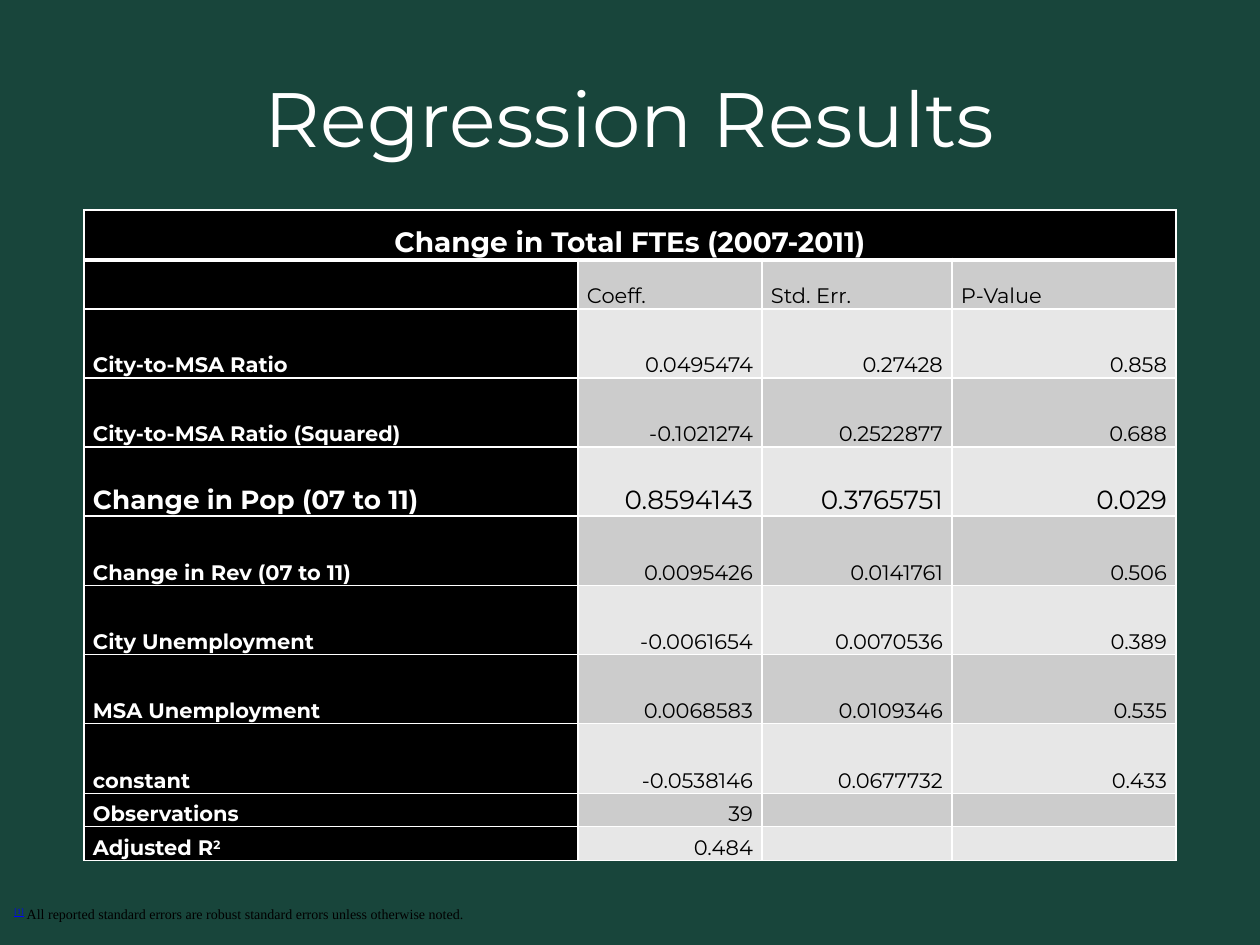
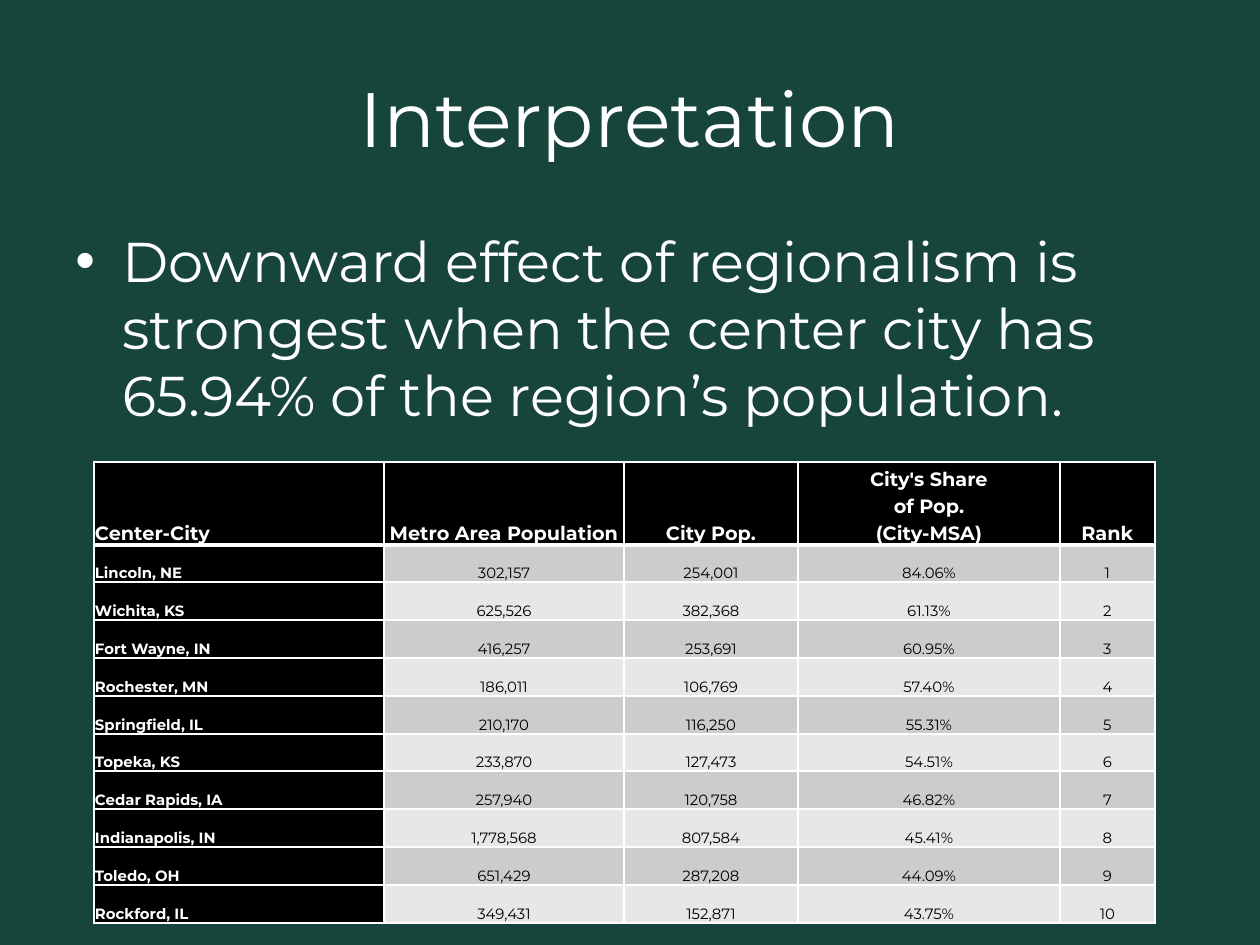
from lxml import etree
from pptx import Presentation
from pptx.dml.color import RGBColor
from pptx.enum.text import MSO_ANCHOR, PP_ALIGN
from pptx.oxml.ns import qn
from pptx.util import Emu, Pt

LEFT, CENTER, RIGHT = PP_ALIGN.LEFT, PP_ALIGN.CENTER, PP_ALIGN.RIGHT
TOP, MIDDLE, BOTTOM = MSO_ANCHOR.TOP, MSO_ANCHOR.MIDDLE, MSO_ANCHOR.BOTTOM

GREEN, WHITE, BLACK, LINK = "18453B", "FFFFFF", "000000", "0000FF"
BANDS = ("E7E7E7", "CCCCCC")
FONT, NOTE_FONT = "Montserrat", "Times New Roman"
TITLE_ONLY = 5


def px(n):
    return Emu(round(n * 914400 / 126))


def rgb(color):
    return RGBColor.from_string(color)


def split(total, n):
    """Divide total into n nearly equal whole lengths."""
    return [total * (i + 1) // n - total * i // n for i in range(n)]


def format_run(r, size, color, font=FONT, bold=False, underline=False, sup=False):
    f = r.font
    f.name, f.size, f.bold, f.underline = font, Pt(size), bold, underline
    f.color.rgb = rgb(color)
    if sup:
        r._r.get_or_add_rPr().set("baseline", "30000")


def write(tf, text, align=LEFT, spacing=None, **fmt):
    """Fill tf with a string (one paragraph a line) or a list of (text, format) runs."""
    paragraphs = text.split("\n") if isinstance(text, str) else [text]
    for i, runs in enumerate(paragraphs):
        p = tf.add_paragraph() if i else tf.paragraphs[0]
        p.alignment, p.line_spacing = align, spacing
        if not runs:
            p._p.get_or_add_endParaRPr().set("sz", str(round(fmt["size"] * 100)))
            continue
        for part, extra in [(runs, {})] if isinstance(runs, str) else runs:
            r = p.add_run()
            r.text = part
            format_run(r, **{**fmt, **extra})


def set_borders(cell, **widths):
    """Draw white cell borders; L, R, T and B are widths in points."""
    tc_pr = cell._tc.get_or_add_tcPr()
    for i, side in enumerate("LRTB"):
        ln = etree.Element(qn("a:ln" + side), w=str(Pt(widths.get(side, 1))))
        fill = etree.SubElement(ln, qn("a:solidFill"))
        etree.SubElement(fill, qn("a:srgbClr"), val=WHITE)
        tc_pr.insert(i, ln)


class Deck:
    def __init__(self):
        self.prs = Presentation()
        self.prs.slide_width, self.prs.slide_height = px(1260), px(945)
        self.s = None

    def slide(self, title):
        self.s = self.prs.slides.add_slide(self.prs.slide_layouts[TITLE_ONLY])
        fill = self.s.background.fill
        fill.solid()
        fill.fore_color.rgb = rgb(GREEN)
        sp = self.s.shapes.title
        sp.left, sp.top, sp.width, sp.height = map(px, (63, 38, 1134, 157))
        sp.text_frame.vertical_anchor = MIDDLE
        write(sp.text_frame, title, align=CENTER, size=44, color=WHITE)

    def text(self, x, y, w, h, text, anchor=TOP, **fmt):
        tf = self.s.shapes.add_textbox(px(x), px(y), px(w), px(h)).text_frame
        tf.word_wrap, tf.vertical_anchor = True, anchor
        write(tf, text, **fmt)
        return tf

    def bullet(self, x, y, w, h, text, size, indent):
        p = self.text(x, y, w, h, text, size=size, color=WHITE).paragraphs[0]
        p.space_before = Pt(size * 0.2)
        p_pr = p._p.get_or_add_pPr()
        p_pr.set("marL", str(px(indent)))
        p_pr.set("indent", str(-px(indent)))
        etree.SubElement(p_pr, qn("a:buFont"), typeface="Arial")
        etree.SubElement(p_pr, qn("a:buChar"), char="•")

    def table(self, x, y, cols, heights, data, sizes, margins, align, row_aligns):
        """Black header row and label column, banded values; a one-cell row is merged."""
        frame = self.s.shapes.add_table(len(data), len(cols), px(x), px(y),
                                        px(sum(cols)), px(sum(heights)))
        tbl = frame.table
        tbl.first_row = tbl.horz_banding = False
        for col, w in zip(tbl.columns, cols):
            col.width = px(w)
        for i, (row, h, size) in enumerate(zip(data, heights, sizes)):
            tbl.rows[i].height = px(h)
            for j in range(len(cols)):
                cell = tbl.cell(i, j)
                dark = i == 0 or j == 0
                cell.fill.solid()
                cell.fill.fore_color.rgb = rgb(BLACK if dark else BANDS[i % 2])
                set_borders(cell, T=3 if i == 1 else 1, B=3 if i == 0 else 1)
                cell.vertical_anchor = BOTTOM
                (cell.margin_left, cell.margin_top,
                 cell.margin_right, cell.margin_bottom) = map(px, margins)
                write(cell.text_frame, row[j] if j < len(row) else "",
                      align=row_aligns.get(i, align if j else LEFT), spacing=1.15,
                      size=size, color=WHITE if dark else BLACK, bold=dark)
            if len(row) == 1:
                tbl.cell(i, 0).merge(tbl.cell(i, len(cols) - 1))


REGRESSION = [
    ["Change in Total FTEs (2007-2011)"],
    ["", "Coeff.", "Std. Err.", "P-Value"],
    ["City-to-MSA Ratio", "0.0495474", "0.27428", "0.858"],
    ["City-to-MSA Ratio (Squared)", "-0.1021274", "0.2522877", "0.688"],
    ["Change in Pop (07 to 11)", "0.8594143", "0.3765751", "0.029"],
    ["Change in Rev (07 to 11)", "0.0095426", "0.0141761", "0.506"],
    ["City Unemployment", "-0.0061654", "0.0070536", "0.389"],
    ["MSA Unemployment", "0.0068583", "0.0109346", "0.535"],
    ["constant", "-0.0538146", "0.0677732", "0.433"],
    ["Observations", "39", "", ""],
    [[("Adjusted R", {}), ("2", {"sup": True})], "0.484", "", ""],
]

CITIES = [
    ["Center-City", "Metro Area Population", "City Pop.",
     "City's Share\nof Pop.\n(City-MSA)", "Rank"],
    ["Lincoln, NE", "302,157", "254,001", "84.06%", "1"],
    ["Wichita, KS", "625,526", "382,368", "61.13%", "2"],
    ["Fort Wayne, IN", "416,257", "253,691", "60.95%", "3"],
    ["Rochester, MN", "186,011", "106,769", "57.40%", "4"],
    ["Springfield, IL", "210,170", "116,250", "55.31%", "5"],
    ["Topeka, KS", "233,870", "127,473", "54.51%", "6"],
    ["Cedar Rapids, IA", "257,940", "120,758", "46.82%", "7"],
    ["Indianapolis, IN", "1,778,568", "807,584", "45.41%", "8"],
    ["Toledo, OH", "651,429", "287,208", "44.09%", "9"],
    ["Rockford, IL", "349,431", "152,871", "43.75%", "10"],
]


def regression_slide(deck):
    deck.slide("Regression Results")
    deck.table(84, 210, [494, 184, 190, 224], [50, 49] + split(485, 7) + split(67, 2),
               REGRESSION, sizes=[16] + [12] * 3 + [15] + [12] * 6,
               margins=(9, 0, 9, 0), align=RIGHT, row_aligns={0: CENTER, 1: LEFT})
    note = [("[1]", {"color": LINK, "underline": True, "sup": True}),
            (" All reported standard errors are robust standard errors "
             "unless otherwise noted.", {})]
    deck.text(2, 882, 1258, 63, note, anchor=MIDDLE, size=8, color=BLACK, font=NOTE_FONT)


def interpretation_slide(deck):
    deck.slide("Interpretation")
    deck.bullet(63, 220, 1134, 624,
                "Downward effect of regionalism is strongest when the center city has "
                "65.94% of the region’s population.", size=32, indent=47)
    deck.table(94, 462, [290, 240, 174, 262, 95], [83] + split(378, 10),
               CITIES, sizes=[11] + [8.5] * 10,
               margins=(1, 1, 1, 0), align=CENTER, row_aligns={})


def main():
    deck = Deck()
    regression_slide(deck)
    interpretation_slide(deck)
    deck.prs.save("out.pptx")


if __name__ == "__main__":
    main()
